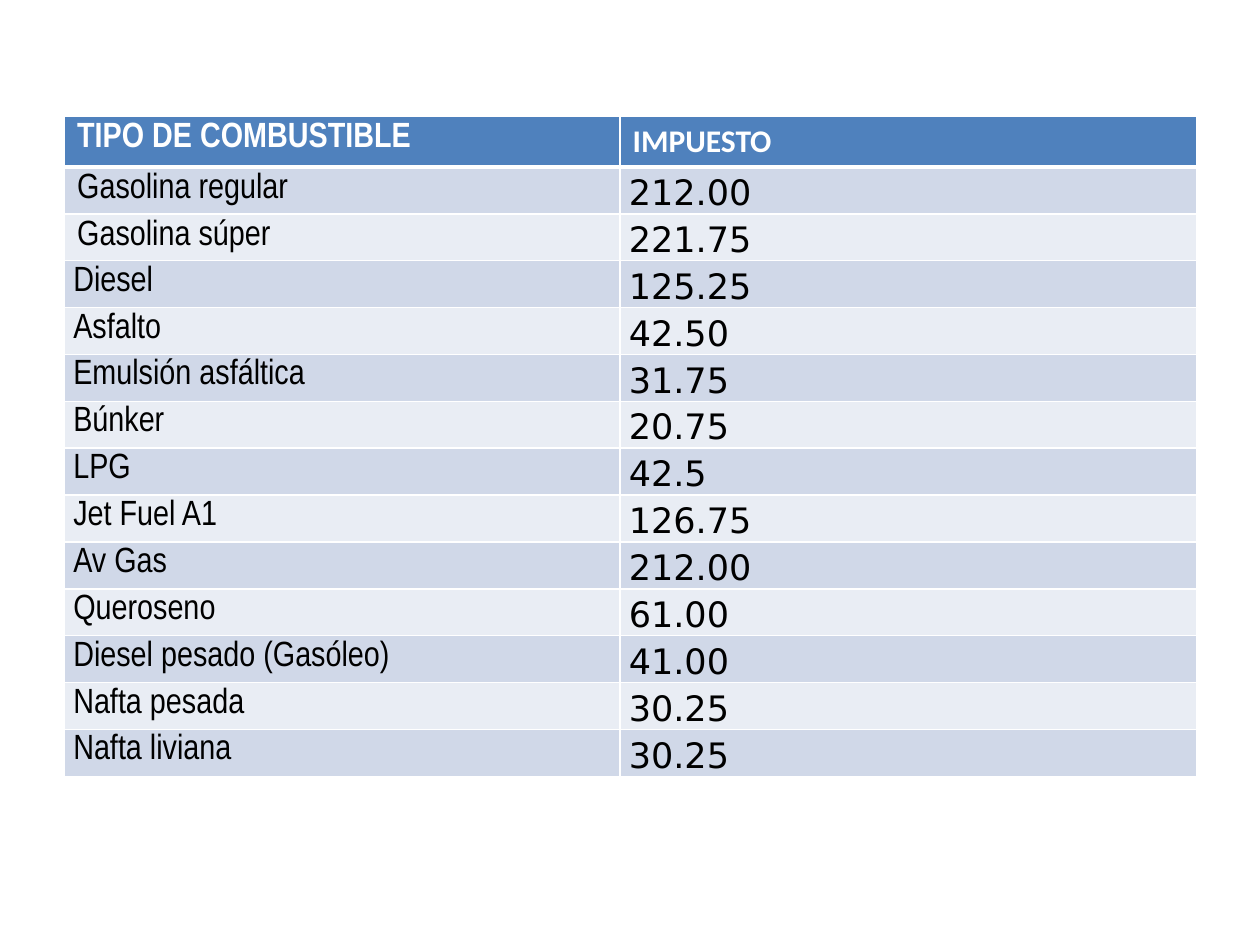
from pptx import Presentation
from pptx.dml.color import RGBColor
from pptx.enum import text
from pptx.oxml import parse_xml
from pptx.oxml.ns import nsdecls
from pptx.util import Pt

WHITE = RGBColor(0xFF, 0xFF, 0xFF)
BLACK = RGBColor(0, 0, 0)
BLUE = RGBColor(0x4F, 0x81, 0xBD)
DARK = RGBColor(0xD0, 0xD8, 0xE8)
LIGHT = RGBColor(0xE9, 0xED, 0xF4)

HEAD = ("TIPO DE COMBUSTIBLE", "IMPUESTO")
FUELS = [
    ("Gasolina regular", "212.00"),
    ("Gasolina súper", "221.75"),
    ("Diesel", "125.25"),
    ("Asfalto", "42.50"),
    ("Emulsión asfáltica", "31.75"),
    ("Búnker", "20.75"),
    ("LPG", "42.5"),
    ("Jet Fuel A1", "126.75"),
    ("Av Gas", "212.00"),
    ("Queroseno", "61.00"),
    ("Diesel pesado (Gasóleo)", "41.00"),
    ("Nafta pesada", "30.25"),
    ("Nafta liviana", "30.25"),
]


class Deck:
    narrow = "Arial Narrow"
    sans = "DejaVu Sans"
    plain = "Calibri"

    def __init__(self):
        self.prs = Presentation()
        self.prs.slide_width, self.prs.slide_height = Pt(720), Pt(540)
        self.slide = self.prs.slides.add_slide(self.prs.slide_layouts[6])

    def table(self, left, top, widths, heights):
        frame = self.slide.shapes.add_table(
            len(heights), len(widths), Pt(left), Pt(top),
            Pt(sum(widths)), Pt(sum(heights)))
        grid = frame.table
        for col, width in zip(grid.columns, widths):
            col.width = Pt(width)
        for row, height in zip(grid.rows, heights):
            row.height = Pt(height)
        return grid

    def edges(self, cell, top=1, bottom=1):
        props = cell._tc.get_or_add_tcPr()
        sides = {"L": 1, "R": 1, "T": top, "B": bottom}
        for spot, (side, width) in enumerate(sides.items()):
            props.insert(spot, parse_xml(
                f'<a:ln{side} {nsdecls("a")} w="{Pt(width)}"><a:solidFill>'
                f'<a:srgbClr val="{WHITE}"/></a:solidFill></a:ln{side}>'))

    def cell(self, cell, words, fill, font, size=20, color=BLACK, bold=False):
        cell.fill.solid()
        cell.fill.fore_color.rgb = fill
        cell.text = words
        par = cell.text_frame.paragraphs[0]
        par.font.name = font
        par.font.size = Pt(size)
        par.font.bold = bold
        par.font.color.rgb = color
        return par

    def tight(self, cell, par):
        cell.margin_left = cell.margin_right = Pt(5)
        cell.margin_top = cell.margin_bottom = 0
        par.line_spacing = 1.15
        par.space_after = Pt(10)

    def taxes(self):
        heights = [28.6] + [26.8] * len(FUELS)
        grid = self.table(36.9, 66.2, (317.4, 329.6), heights)
        for col, (font, size) in enumerate([(self.narrow, 20), (self.plain, 18)]):
            cell = grid.cell(0, col)
            self.cell(cell, HEAD[col], BLUE, font, size, WHITE, True)
            self.edges(cell, bottom=3)
        for row, (fuel, tax) in enumerate(FUELS, 1):
            fill = DARK if row % 2 else LIGHT
            name, rate = grid.cell(row, 0), grid.cell(row, 1)
            par = self.cell(name, fuel, fill, self.narrow)
            if row > 2:
                self.tight(name, par)
                par.alignment = text.PP_ALIGN.JUSTIFY
            self.tight(rate, self.cell(rate, tax, fill, self.sans))
            for cell in (name, rate):
                self.edges(cell, top=3 if row == 1 else 1)


def main():
    deck = Deck()
    deck.taxes()
    deck.prs.save("out.pptx")


if __name__ == "__main__":
    main()
